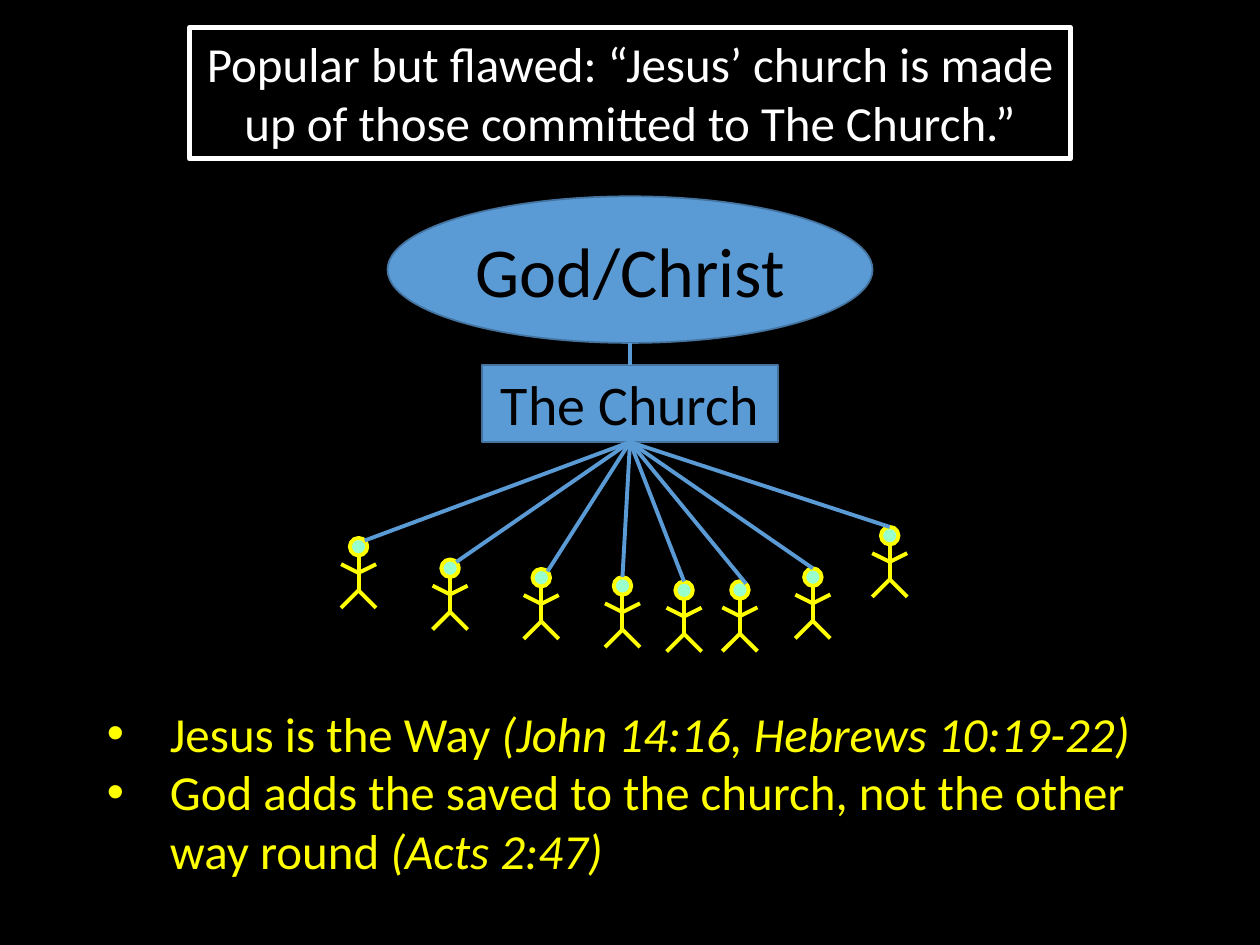
from dataclasses import dataclass
from math import sqrt

from lxml.etree import SubElement
from pptx import Presentation
from pptx.dml.color import RGBColor
from pptx.enum.shapes import MSO_CONNECTOR, MSO_SHAPE
from pptx.enum.text import MSO_ANCHOR, MSO_AUTO_SIZE, PP_ALIGN
from pptx.oxml.ns import qn
from pptx.util import Pt

BLACK, WHITE, YELLOW = "000000", "FFFFFF", "FFFF00"
BLUE, DARK_BLUE, MINT = "5B9BD5", "43739E", "99FFCC"
FONT = "Calibri"
CENTER = 360
UNIT = 10  # head diameter; the other limbs are multiples of it


@dataclass(frozen=True)
class Box:
    left: float
    top: float
    width: float
    height: float


@dataclass(frozen=True)
class Person:
    center: float
    top: float
    joined_at_side: bool = False  # line meets the upper right of the head


PEOPLE = [
    Person(204.9, 307.4, True),
    Person(257.2, 319.7, True),
    Person(309.3, 325.1, True),
    Person(355.7, 329.8),
    Person(390.9, 332.3),
    Person(422.8, 332.1, True),
    Person(464.5, 324.8),
    Person(508.4, 301.1),
]

# Limbs as (x, y) to (x, y), in units from the top centre of the head
LIMBS = [
    ((0, 1), (0, 3)),
    ((0, 3), (1, 4)),
    ((0, 3), (-1, 4)),
    ((-1, 1.5), (0, 2)),
    ((0, 2), (1, 1.5)),
]


def color(value: str) -> RGBColor:
    return RGBColor.from_string(value)


def add_box(shapes, kind, box: Box, line: str, line_width: float, fill: str | None = None):
    shape = shapes.add_shape(kind, Pt(box.left), Pt(box.top), Pt(box.width), Pt(box.height))
    shape.shadow.inherit = False
    if fill:
        shape.fill.solid()
        shape.fill.fore_color.rgb = color(fill)
    else:
        shape.fill.background()
    shape.line.color.rgb = color(line)
    shape.line.width = Pt(line_width)
    return shape


def add_line(shapes, start: tuple, end: tuple, line: str) -> None:
    connector = shapes.add_connector(
        MSO_CONNECTOR.STRAIGHT, Pt(start[0]), Pt(start[1]), Pt(end[0]), Pt(end[1])
    )
    connector.line.color.rgb = color(line)
    connector.line.width = Pt(2.25)
    SubElement(connector._element.spPr, qn("a:effectLst"))


def add_text(paragraph, text: str, *, size: float, fill: str, italic: bool = False) -> None:
    run = paragraph.add_run()
    run.text = text
    run.font.name = FONT
    run.font.size = Pt(size)
    run.font.italic = italic
    run.font.color.rgb = color(fill)


def add_label(shape, text: str, size: float, fill: str, anchor=MSO_ANCHOR.MIDDLE) -> None:
    frame = shape.text_frame
    frame.word_wrap = True
    frame.vertical_anchor = anchor
    paragraph = frame.paragraphs[0]
    paragraph.alignment = PP_ALIGN.CENTER
    add_text(paragraph, text, size=size, fill=fill)


def add_bullet(paragraph) -> None:
    properties = paragraph._p.get_or_add_pPr()
    properties.set("marL", str(Pt(36)))
    properties.set("indent", str(-Pt(36)))
    SubElement(properties, qn("a:buFont"), typeface="Arial")
    SubElement(properties, qn("a:buChar"), char="•")


def add_person(slide, person: Person) -> None:
    shapes = slide.shapes.add_group_shape().shapes
    head = Box(person.center - UNIT / 2, person.top, UNIT, UNIT)
    add_box(shapes, MSO_SHAPE.OVAL, head, YELLOW, 2.25, MINT)
    for limb in LIMBS:
        start, end = [(person.center + x * UNIT, person.top + y * UNIT) for x, y in limb]
        add_line(shapes, start, end, YELLOW)


def head_joint(person: Person) -> tuple[float, float]:
    if not person.joined_at_side:
        return person.center, person.top
    radius = UNIT / 2
    reach = radius / sqrt(2)
    return person.center + reach, person.top + radius - reach


def main() -> None:
    presentation = Presentation()
    presentation.slide_width, presentation.slide_height = Pt(720), Pt(540)
    slide = presentation.slides.add_slide(presentation.slide_layouts[6])
    slide.background.fill.solid()
    slide.background.fill.fore_color.rgb = color(BLACK)

    # Title
    title = add_box(slide.shapes, MSO_SHAPE.RECTANGLE, Box(108.4, 15.6, 503.2, 75.1), WHITE, 3)
    add_label(title, "Popular but flawed: “Jesus’ church is made up of those "
              "committed to The Church.”", 28, WHITE, MSO_ANCHOR.TOP)
    title.text_frame.auto_size = MSO_AUTO_SIZE.SHAPE_TO_FIT_TEXT

    # God/Christ above the church
    source_box = Box(221.4, 112.2, 277.2, 83.8)
    church_box = Box(275.4, 208.6, 169.2, 44)
    source = add_box(slide.shapes, MSO_SHAPE.OVAL, source_box, DARK_BLUE, 1, BLUE)
    add_label(source, "God/Christ", 40, BLACK)
    church = add_box(slide.shapes, MSO_SHAPE.RECTANGLE, church_box, DARK_BLUE, 1, BLUE)
    add_label(church, "The Church", 32, BLACK)
    source_bottom = source_box.top + source_box.height
    add_line(slide.shapes, (CENTER, source_bottom), (CENTER, church_box.top), BLUE)

    # Bullet points
    points = slide.shapes.add_textbox(Pt(54), Pt(398.2), Pt(611.3), Pt(109))
    frame = points.text_frame
    frame.word_wrap = True
    frame.auto_size = MSO_AUTO_SIZE.SHAPE_TO_FIT_TEXT
    statements = [
        ("Jesus is the Way ", "(John 14:16, Hebrews 10:19-22)"),
        ("God adds the saved to the church, not the other way round ", "(Acts 2:47)"),
    ]
    for index, (statement, verse) in enumerate(statements):
        paragraph = frame.add_paragraph() if index else frame.paragraphs[0]
        add_bullet(paragraph)
        add_text(paragraph, statement, size=28, fill=YELLOW)
        add_text(paragraph, verse, size=28, fill=YELLOW, italic=True)
        # The bullet takes the colour of the first run

    # People, each joined to the church
    for person in PEOPLE:
        add_person(slide, person)
    church_bottom = church_box.top + church_box.height
    for person in PEOPLE:
        add_line(slide.shapes, (CENTER, church_bottom), head_joint(person), BLUE)

    presentation.save("out.pptx")


if __name__ == "__main__":
    main()
